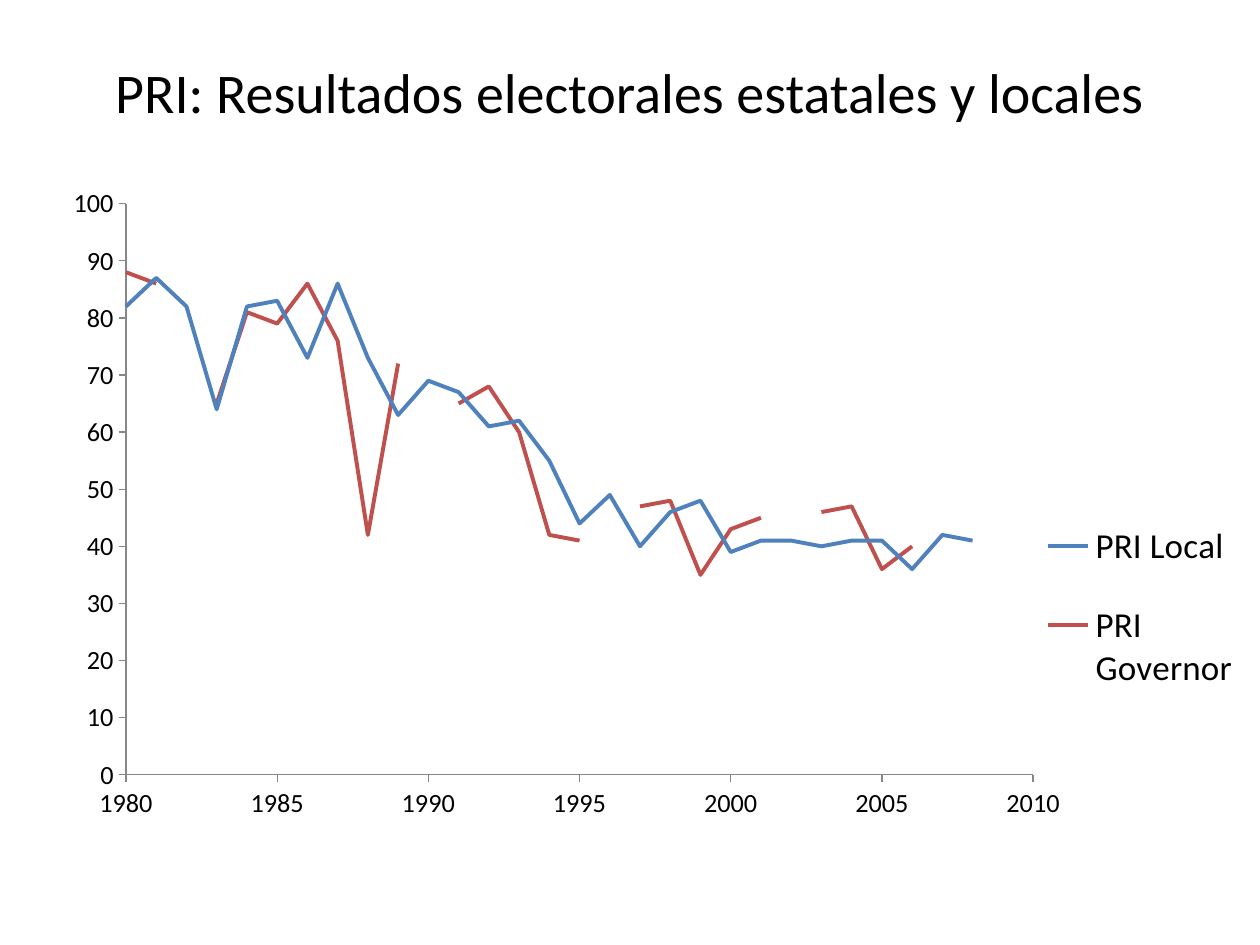
from pptx import Presentation, util as u
from pptx.chart.data import XyChartData
from pptx.dml.color import RGBColor
from pptx.enum import chart as charts, text
from pptx.oxml import parse_xml
from pptx.oxml.ns import nsdecls

COLOURS = {"text": "000000", "axis": "878787", "local": "4F81BD", "governor": "C0504D"}
FIRST_YEAR = 1980
RESULTS = {
    "PRI Local": ("local", [
        82, 87, 82, 64, 82, 83, 73, 86, 73, 63, 69, 67, 61, 62, 55,
        44, 49, 40, 46, 48, 39, 41, 41, 40, 41, 41, 36, 42, 41]),
    "PRI Governor": ("governor", [
        88, 86, None, 65, 81, 79, 86, 76, 42, 72, None, 65, 68, 60, 42,
        41, None, 47, 48, 35, 43, 45, None, 46, 47, 36, 40, None, None]),
}


class SlideBuilder:
    """Holds the style and the current slide, and adds each kind of element."""

    def __init__(self, deck, font="Calibri"):
        self.font = font
        self.slide = deck.slides.add_slide(deck.slide_layouts[5])

    def colour(self, name):
        return RGBColor.from_string(COLOURS[name])

    def style_font(self, font, size):
        font.name = self.font
        font.size = u.Pt(size)
        font.color.rgb = self.colour("text")

    def title(self, wording, left, top, width, height, size):
        box = self.slide.shapes.title
        box.left, box.top, box.width, box.height = map(u.Pt, (left, top, width, height))
        frame = box.text_frame
        frame.text = wording
        frame.word_wrap = True
        frame.vertical_anchor = text.MSO_ANCHOR.MIDDLE
        para = frame.paragraphs[0]
        para.alignment = text.PP_ALIGN.CENTER
        self.style_font(para.font, size)

    def place(self, parent, index, fractions, inner=False):
        for old in parent.xpath("./c:layout"):
            parent.remove(old)
        target = '<c:layoutTarget val="inner"/>' if inner else ""
        modes = "".join(f'<c:{side}Mode val="edge"/>' for side in "xy")
        sizes = "".join(f'<c:{side} val="{value}"/>' for side, value in zip("xywh", fractions))
        parent.insert(index, parse_xml(
            f'<c:layout {nsdecls("c")}><c:manualLayout>{target}{modes}{sizes}'
            "</c:manualLayout></c:layout>"))

    def axis(self, axis, low, high, step):
        axis.minimum_scale, axis.maximum_scale, axis.major_unit = low, high, step
        axis.has_major_gridlines = False
        axis.major_tick_mark = charts.XL_TICK_MARK.OUTSIDE
        axis.minor_tick_mark = charts.XL_TICK_MARK.NONE
        axis.tick_labels.number_format = "General"
        axis.tick_labels.number_format_is_linked = False
        axis.format.line.color.rgb = self.colour("axis")
        axis.format.line.width = u.Pt(0.75)
        self.style_font(axis.tick_labels.font, 15)

    def scatter(self, results, left, top, width, height):
        data = XyChartData()
        for name, (_, shares) in results.items():
            points = data.add_series(name)
            for year, share in enumerate(shares, FIRST_YEAR):
                points.add_data_point(year, share)
        chart = self.slide.shapes.add_chart(
            charts.XL_CHART_TYPE.XY_SCATTER_LINES_NO_MARKERS,
            *map(u.Pt, (left, top, width, height)), data).chart
        chart.has_title = False
        self.style_font(chart.font, 10)
        plot = chart.plots[0]
        plot.vary_by_categories = False
        for series, (colour, _) in zip(plot.series, results.values()):
            series.smooth = False
            series.marker.style = charts.XL_MARKER_STYLE.NONE
            series.format.line.color.rgb = self.colour(colour)
            series.format.line.width = u.Pt(2.25)
        self.axis(chart.category_axis, FIRST_YEAR, 2010, 5)
        self.axis(chart.value_axis, 0, 100, 10)
        chart.has_legend = True
        chart.legend.position = charts.XL_LEGEND_POSITION.RIGHT
        chart.legend.include_in_layout = False
        self.style_font(chart.legend.font, 20)
        self.place(chart.element.xpath(".//c:plotArea")[0], 0, (0.1, 0.05, 0.72, 0.8), True)
        self.place(chart.element.xpath(".//c:legend")[0], 1, (0.82, 0.45, 0.17, 0.33))


def main():
    deck = Presentation()
    deck.slide_width, deck.slide_height = u.Pt(720), u.Pt(540)
    page = SlideBuilder(deck)
    page.title("PRI: Resultados electorales estatales y locales", 36, 21.6, 648, 61.2, 32)
    page.scatter(RESULTS, 0, 96, 720, 408)
    deck.save("out.pptx")


if __name__ == "__main__":
    main()
